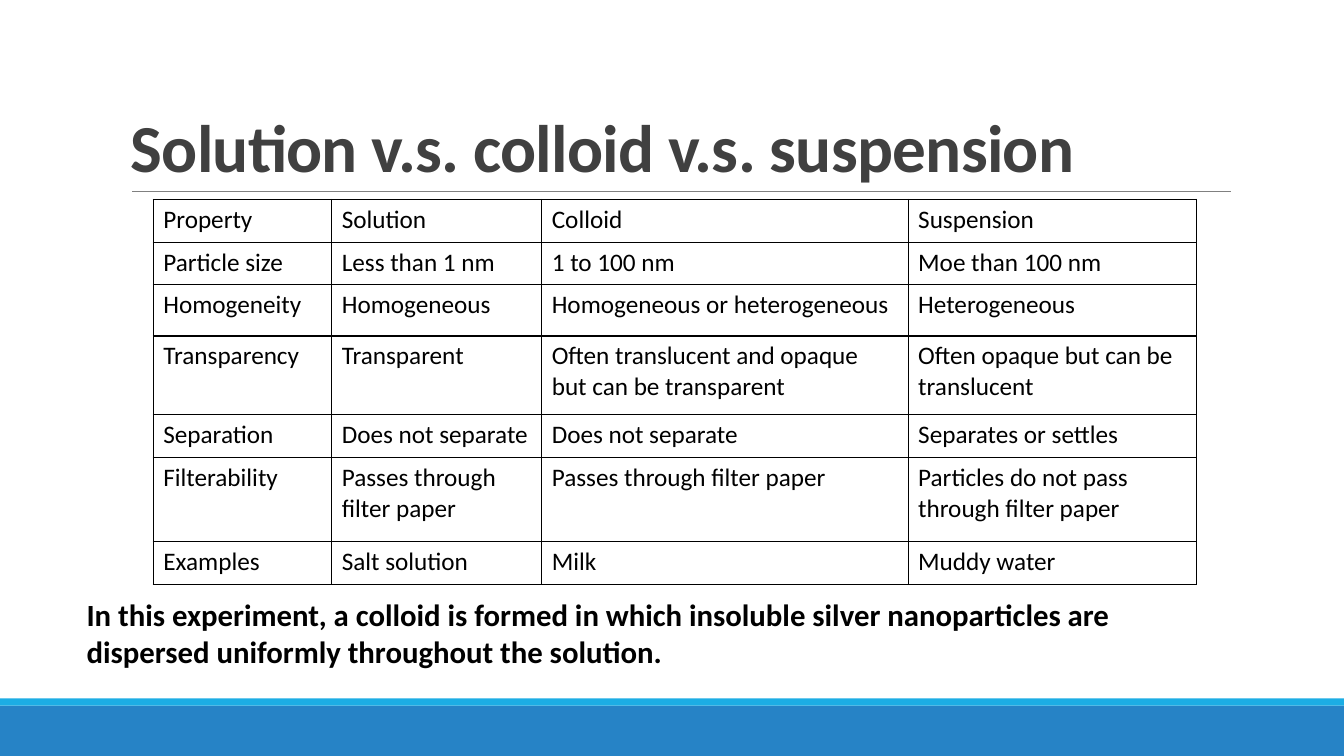
from lxml.etree import SubElement
from pptx import Presentation
from pptx.dml.color import RGBColor
from pptx.enum.shapes import MSO_CONNECTOR as Connector, MSO_SHAPE as Shape
from pptx.enum.text import MSO_ANCHOR as Anchor
from pptx.oxml import parse_xml
from pptx.oxml.ns import nsdecls, qn
from pptx.util import Pt

PX = 9525
BLACK = "000000"


def color(code):
    return RGBColor.from_string(code)


def set_font(paragraph, size, code, bold=False):
    font = paragraph.font
    font.name, font.size, font.bold = "Calibri", Pt(size), bold
    font.color.rgb = color(code)


deck = Presentation()
deck.slide_width, deck.slide_height = 1280 * PX, 720 * PX
page = deck.slides.add_slide(deck.slide_layouts[6])

# Footer bars and title rule
for top, height, fill in [(672, 48, "2683C6"), (665, 7, "1CADE4")]:
    bar = page.shapes.add_shape(Shape.RECTANGLE, 0, top * PX, 1280 * PX, height * PX)
    bar.shadow.inherit = False
    bar.fill.solid()
    bar.fill.fore_color.rgb = color(fill)
    bar.line.fill.background()

rule = page.shapes.add_connector(
    Connector.STRAIGHT, 126 * PX, 182 * PX, 1172 * PX, 182 * PX)
rule.line.color.rgb = color("808080")
rule.line.width = Pt(0.5)
SubElement(rule._element.spPr, qn("a:effectLst"))

# Title and conclusion
texts = [
    ("Solution v.s. colloid v.s. suspension",
     (115, 30, 1056, 152), 48, "404040", Anchor.BOTTOM, 0.85, -50),
    ("In this experiment, a colloid is formed in which insoluble silver "
     "nanoparticles are dispersed uniformly throughout the solution.",
     (73, 563, 1115, 81), 22, BLACK, Anchor.TOP, 1.0, 0),
]
for text, place, size, code, anchor, line_spacing, tracking in texts:
    box = page.shapes.add_textbox(*(length * PX for length in place))
    frame = box.text_frame
    frame.word_wrap = True
    frame.vertical_anchor = anchor
    para = frame.paragraphs[0]
    para.line_spacing = line_spacing
    span = para.add_run()
    span.text = text
    set_font(para, size, code, bold=True)
    span.font._element.set("spc", str(tracking))

# Comparison table
rows = [
    ("Property", "Solution", "Colloid", "Suspension"),
    ("Particle size", "Less than 1 nm", "1 to 100 nm", "Moe than 100 nm"),
    ("Homogeneity", "Homogeneous", "Homogeneous or heterogeneous", "Heterogeneous"),
    ("Transparency", "Transparent",
     "Often translucent and opaque but can be transparent",
     "Often opaque but can be translucent"),
    ("Separation", "Does not separate", "Does not separate", "Separates or settles"),
    ("Filterability", "Passes through filter paper", "Passes through filter paper",
     "Particles do not pass through filter paper"),
    ("Examples", "Salt solution", "Milk", "Muddy water"),
]
widths = [170, 200, 349, 275]
heights = [41, 40, 49, 75, 41, 80, 41]
table = page.shapes.add_table(
    len(rows), len(widths), 146 * PX, 190 * PX,
    sum(widths) * PX, sum(heights) * PX).table
table.first_row = table.horz_banding = False
for column, width in zip(table.columns, widths):
    column.width = width * PX
for row, height, values in zip(table.rows, heights, rows):
    row.height = height * PX
    for cell, value in zip(row.cells, values):
        cell.text = value
        set_font(cell.text_frame.paragraphs[0], 18, BLACK)
        properties = cell._tc.get_or_add_tcPr()
        for side in ("lnL", "lnR", "lnT", "lnB"):
            properties.append(parse_xml(
                f'<a:{side} {nsdecls("a")} w="{Pt(1)}"><a:solidFill>'
                f'<a:srgbClr val="{BLACK}"/></a:solidFill></a:{side}>'))
        cell.fill.background()

deck.save("out.pptx")
